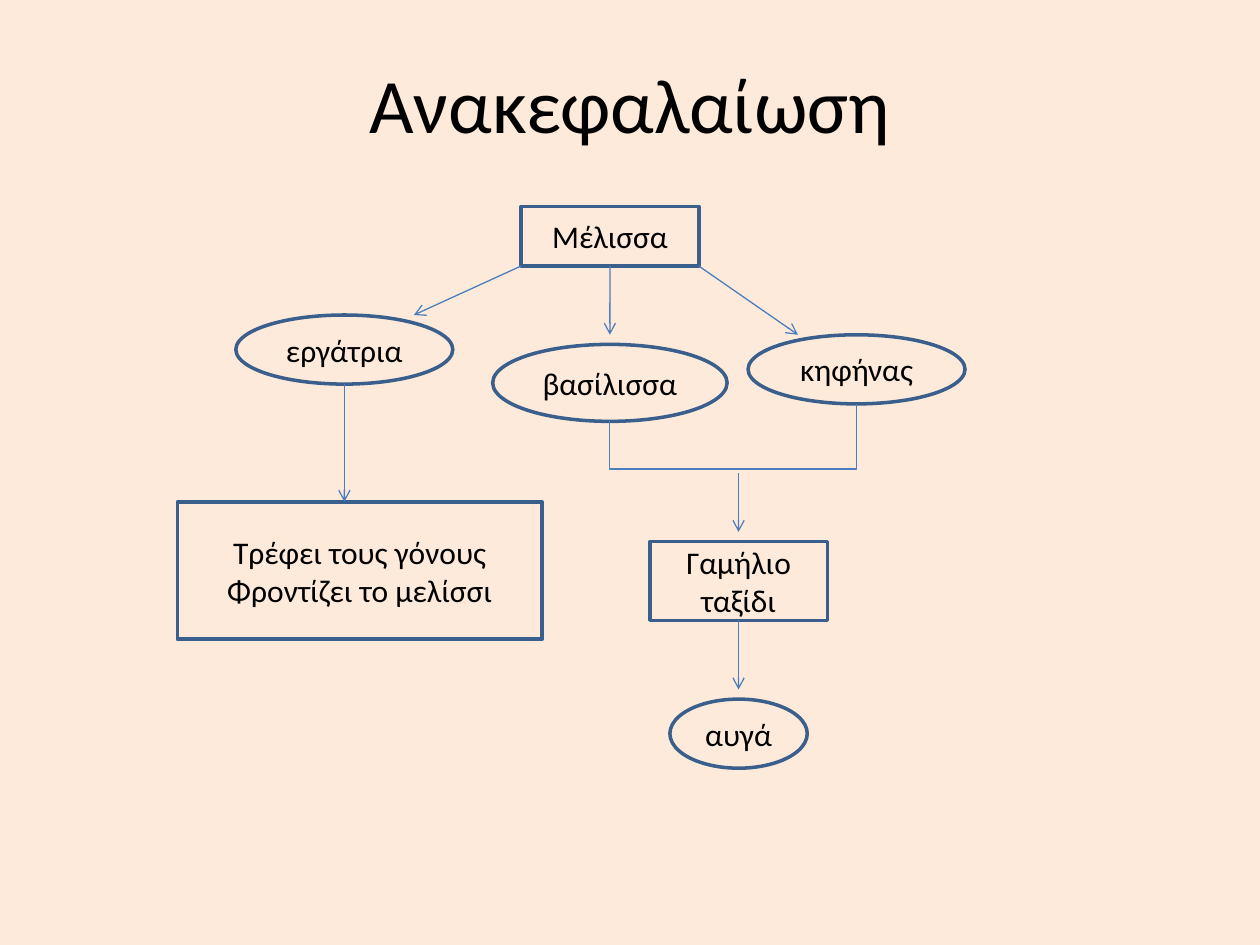
from lxml import etree
from pptx import Presentation
from pptx.dml.color import RGBColor
from pptx.enum.shapes import MSO_CONNECTOR, MSO_SHAPE
from pptx.enum.text import MSO_ANCHOR, PP_ALIGN
from pptx.oxml.ns import qn
from pptx.util import Pt

CREAM = RGBColor(0xFD, 0xEA, 0xDA)
OUTLINE = RGBColor(0x3A, 0x5F, 0x8C)
ARROW = RGBColor(0x4B, 0x7E, 0xBC)
BLACK = RGBColor(0, 0, 0)
FONT = "Calibri"
PROCESS, RECTANGLE, OVAL = MSO_SHAPE.FLOWCHART_PROCESS, MSO_SHAPE.RECTANGLE, MSO_SHAPE.OVAL
STRAIGHT, ELBOW = MSO_CONNECTOR.STRAIGHT, MSO_CONNECTOR.ELBOW
MIDDLE, CENTER = MSO_ANCHOR.MIDDLE, PP_ALIGN.CENTER

TITLE = "Ανακεφαλαίωση"
# name: (preset, left, top, width, height, paragraphs)
NODES = {
    "bee": (PROCESS, 297.8, 118, 101.5, 34, ["Μέλισσα"]),
    "worker": (OVAL, 134.8, 180, 124, 39.5, ["εργάτρια"]),
    "queen": (OVAL, 281.5, 196.8, 134, 44, ["βασίλισσα"]),
    "drone": (OVAL, 427.5, 191.3, 124, 39.5, ["κηφήνας"]),
    "flight": (RECTANGLE, 371.3, 309.5, 101.5, 45, ["Γαμήλιο ταξίδι"]),
    "eggs": (OVAL, 382.8, 399.5, 78.5, 39.5, ["αυγά"]),
    "duties": (RECTANGLE, 101.3, 286.8, 208.5, 78.5,
               ["Τρέφει τους γόνους", "Φροντίζει το μελίσσι"]),
}
GAP = 5.5        # space between an arrowhead and its node
JOIN_Y = 268     # level where queen and drone meet


def anchor(name, across, down):
    """Point of a node at the given fractions of its width and height."""
    _, left, top, width, height, _ = NODES[name]
    return left + across * width, top + down * height


def above(name):
    x, y = anchor(name, 0.5, 0)
    return x, y - GAP


def write(text_frame, lines, size):
    text_frame.word_wrap = True
    text_frame.vertical_anchor = MIDDLE
    for index, line in enumerate(lines):
        paragraph = text_frame.add_paragraph() if index else text_frame.paragraphs[0]
        paragraph.alignment = CENTER
        run = paragraph.add_run()
        run.text = line
        run.font.name = FONT
        run.font.size = Pt(size)
        run.font.color.rgb = BLACK


def add_node(slide, preset, left, top, width, height, lines):
    shape = slide.shapes.add_shape(preset, Pt(left), Pt(top), Pt(width), Pt(height))
    shape.shadow.inherit = False
    shape.fill.solid()
    shape.fill.fore_color.rgb = CREAM
    shape.line.color.rgb = OUTLINE
    shape.line.width = Pt(2)
    write(shape.text_frame, lines, 18)


def add_link(slide, kind, start, end):
    link = slide.shapes.add_connector(kind, *(Pt(value) for value in start + end))
    link.line.color.rgb = ARROW
    link.line.width = Pt(0.75)
    etree.SubElement(link._element.spPr, qn("a:effectLst"))
    return link


def add_arrow(slide, start, end):
    link = add_link(slide, STRAIGHT, start, end)
    etree.SubElement(link.line._get_or_add_ln(), qn("a:tailEnd"), type="arrow")


def add_bracket(slide, start, end, level):
    """U-shaped elbow: down from start to level, across, and up to end."""
    (x1, y1), (x2, y2) = start, end
    middle_x, middle_y = (x1 + x2) / 2, (y1 + y2) / 2
    width, height = y1 - y2, x2 - x1    # size before the quarter turn
    link = add_link(slide, ELBOW,
                    (middle_x + width / 2, middle_y + height / 2),
                    (middle_x - width / 2, middle_y - height / 2))
    properties = link._element.spPr
    properties.find(qn("a:xfrm")).set("rot", "5400000")
    adjustments = properties.find(qn("a:prstGeom")).get_or_add_avLst()
    ratio = round((y1 - level) / width * 100000)
    etree.SubElement(adjustments, qn("a:gd"), name="adj1", fmla=f"val {ratio}")


def main():
    presentation = Presentation()
    presentation.slide_width, presentation.slide_height = Pt(720), Pt(540)
    slide = presentation.slides.add_slide(presentation.slide_layouts[5])
    slide.background.fill.solid()
    slide.background.fill.fore_color.rgb = CREAM

    title = slide.shapes.title
    title.left, title.top, title.width, title.height = Pt(36), Pt(21.6), Pt(648), Pt(74.2)
    write(title.text_frame, [TITLE], 44)

    for node in NODES.values():
        add_node(slide, *node)

    worker_x, worker_bottom = anchor("worker", 0.5, 1)
    flight_x, _ = above("flight")
    arrows = [
        (anchor("bee", 0, 1), anchor("worker", 0.82, 0)),
        (anchor("bee", 0.5, 1), above("queen")),
        (anchor("bee", 1, 1), anchor("drone", 0.23, 0)),
        ((flight_x, JOIN_Y + 2), above("flight")),
        (anchor("flight", 0.5, 1), above("eggs")),
        ((worker_x, worker_bottom), (worker_x, anchor("duties", 0, 0)[1])),
    ]
    for start, end in arrows:
        add_arrow(slide, start, end)
    add_bracket(slide, anchor("queen", 0.5, 1), anchor("drone", 0.5, 1), JOIN_Y)

    presentation.save("out.pptx")


if __name__ == "__main__":
    main()
